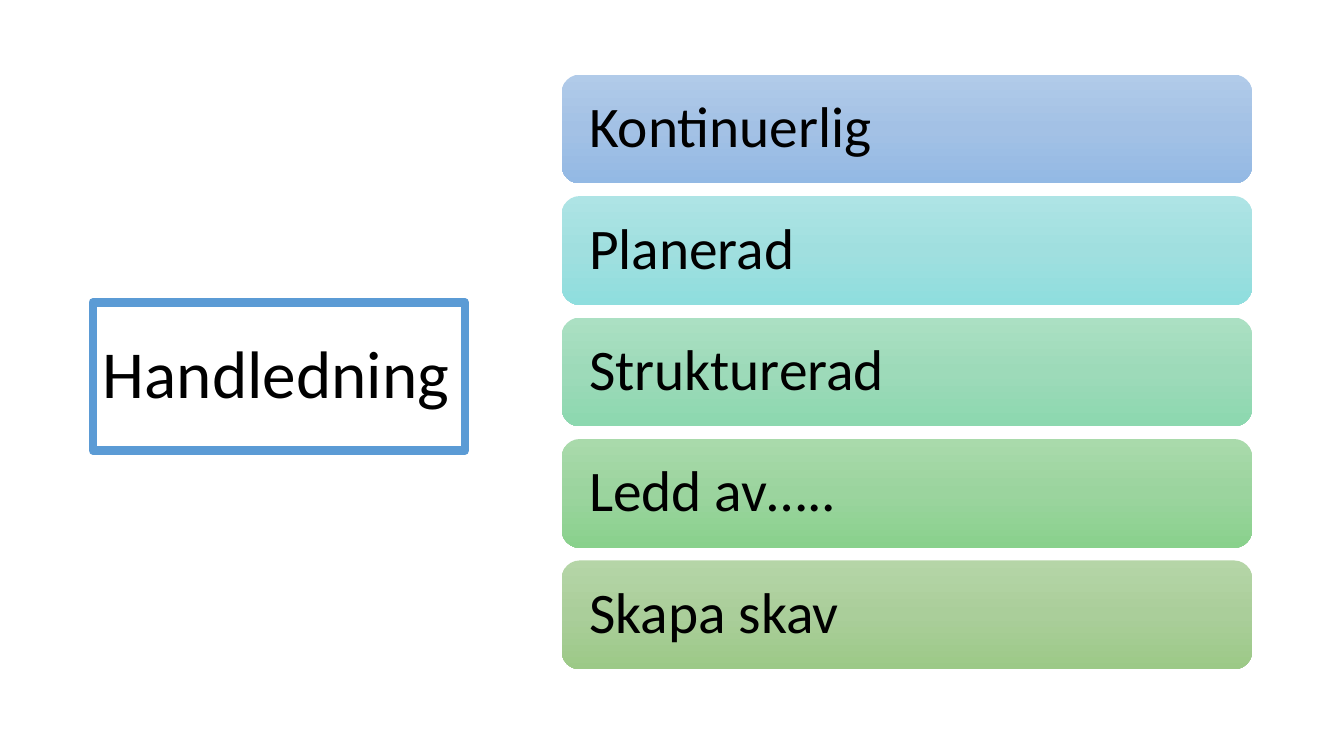
from copy import deepcopy

from lxml.etree import SubElement
from pptx import Presentation
from pptx.dml.color import RGBColor
from pptx.enum.shapes import MSO_SHAPE
from pptx.enum.text import MSO_ANCHOR, PP_ALIGN
from pptx.oxml.ns import qn
from pptx.util import Inches, Pt

BLACK = RGBColor(0x00, 0x00, 0x00)
BLUE = RGBColor(0x5B, 0x9B, 0xD5)
# Label and gradient colours from top to bottom
BARS = [
    ("Kontinuerlig", (RGBColor(0xB1, 0xCB, 0xE9), RGBColor(0xA3, 0xC1, 0xE5), RGBColor(0x93, 0xB9, 0xE4))),
    ("Planerad", (RGBColor(0xAE, 0xE4, 0xE5), RGBColor(0xA0, 0xDF, 0xDF), RGBColor(0x8F, 0xDE, 0xDE))),
    ("Strukturerad", (RGBColor(0xAB, 0xE0, 0xC3), RGBColor(0x9D, 0xDA, 0xB9), RGBColor(0x8C, 0xD8, 0xAF))),
    ("Ledd av…..", (RGBColor(0xA9, 0xDA, 0xAB), RGBColor(0x9B, 0xD4, 0x9E), RGBColor(0x89, 0xD1, 0x8C))),
    ("Skapa skav", (RGBColor(0xB5, 0xD5, 0xA7), RGBColor(0xAA, 0xCE, 0x9A), RGBColor(0x9C, 0xC9, 0x87))),
]
BAR_TOP, BAR_PITCH = 0.74, 1.205


def add_label(sp, text, size, margin):
    tf = sp.text_frame
    tf.word_wrap = True
    tf.vertical_anchor = MSO_ANCHOR.MIDDLE
    tf.margin_left = tf.margin_right = Inches(margin)
    p = tf.paragraphs[0]
    p.alignment = PP_ALIGN.LEFT
    p.line_spacing = 0.9
    r = p.add_run()
    r.text = text
    r.font.name = "Calibri"
    r.font.size = Pt(size)
    r.font.color.rgb = BLACK


def fill_gradient(sp, colors):
    """Fill from top to bottom with three evenly spaced colours."""
    sp.fill.gradient()
    sp.fill.gradient_angle = 270
    stops = sp._element.spPr.find(".//" + qn("a:gsLst"))
    stops.insert(1, deepcopy(stops[0]))
    for i, (stop, color) in enumerate(zip(sp.fill.gradient_stops, colors)):
        stop.position = i / 2
        stop.color.rgb = color


prs = Presentation()
prs.slide_width = Inches(13.33)
prs.slide_height = Inches(7.5)
s = prs.slides.add_slide(prs.slide_layouts[6])

title = s.shapes.add_shape(MSO_SHAPE.RECTANGLE, Inches(0.92), Inches(3), Inches(3.69), Inches(1.47))
title.shadow.inherit = False
title.fill.background()
title.line.color.rgb = BLUE
title.line.width = Pt(6)
SubElement(title._element.spPr.find(qn("a:ln")), qn("a:round"))
add_label(title, "Handledning", 48, 0.1)

for i, (text, colors) in enumerate(BARS):
    bar = s.shapes.add_shape(MSO_SHAPE.ROUNDED_RECTANGLE, Inches(5.57), Inches(BAR_TOP + i * BAR_PITCH),
                             Inches(6.85), Inches(1.08))
    bar.shadow.inherit = False
    bar.line.fill.background()
    fill_gradient(bar, colors)
    add_label(bar, text, 41, 0.22)

prs.save("out.pptx")
